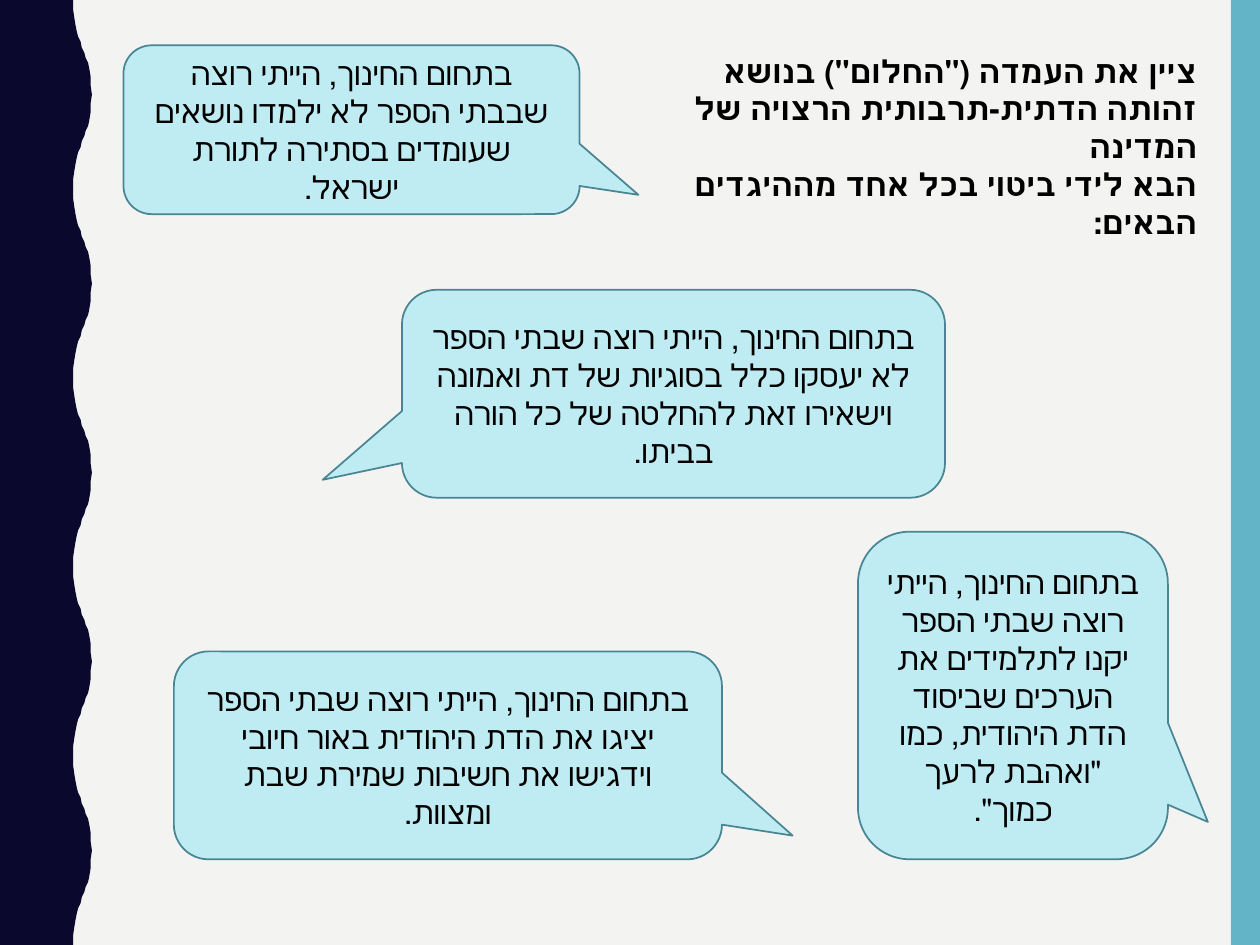
"""Build a slide of four speech bubbles about religion in state education."""
from dataclasses import dataclass

from pptx import Presentation
from pptx.dml.color import RGBColor
from pptx.enum import lang, shapes, text
from pptx.util import Inches, Pt

PAPER, NAVY, TEAL = "F3F3F2", "0B082E", "62B4C6"
BUBBLE, OUTLINE, INK = "BFECF3", "498592", "000000"

WAVE_PERIOD, WAVE_COUNT = 1.5, 5
HALF_WAVE = [
    (0.58, 0), (0.58, 0.07), (0.59, 0.14), (0.6, 0.2), (0.61, 0.25),
    (0.62, 0.29), (0.64, 0.33), (0.65, 0.38), (0.67, 0.42), (0.68, 0.46),
    (0.7, 0.5), (0.71, 0.55), (0.72, 0.61), (0.72, 0.68), (0.73, 0.75),
]


@dataclass(frozen=True)
class Opinion:
    left: float
    top: float
    width: float
    height: float
    words: str
    tail: tuple[float, float] = (0.629, 0.386)


OPINIONS = [
    Opinion(0.98, 0.36, 3.62, 1.34,
            "בתחום החינוך, הייתי רוצה שבבתי הספר לא ילמדו נושאים "
            "שעומדים בסתירה לתורת ישראל."),
    Opinion(6.81, 4.22, 2.46, 2.6,
            "בתחום החינוך, הייתי רוצה שבתי הספר יקנו לתלמידים את הערכים "
            "שביסוד הדת היהודית, כמו \"ואהבת לרעך כמוך\"."),
    Opinion(3.19, 2.3, 4.31, 1.65,
            "בתחום החינוך, הייתי רוצה שבתי הספר לא יעסקו כלל בסוגיות של "
            "דת ואמונה וישאירו זאת להחלטה של כל הורה בביתו.",
            (-0.646, 0.414)),
    Opinion(1.38, 5.17, 4.35, 1.65,
            "בתחום החינוך, הייתי רוצה שבתי הספר יציגו את הדת היהודית באור "
            "חיובי וידגישו את חשיבות שמירת שבת ומצוות."),
]
TASK = [
    "ציין את העמדה (\"החלום\") בנושא זהותה הדתית-תרבותית הרצויה של המדינה",
    "הבא לידי ביטוי בכל אחד מההיגדים הבאים:",
]


def paint(fill, color: str) -> None:
    fill.solid()
    fill.fore_color.rgb = RGBColor.from_string(color)


def style(shape, fill: str, line: str | None = None) -> None:
    shape.shadow.inherit = False
    paint(shape.fill, fill)
    if line:
        paint(shape.line.fill, line)
        shape.line.width = Pt(1)
    else:
        shape.line.fill.background()


def write(frame, lines: list[str], *, font: str, align, anchor,
          size: float = 18, bold: bool = False, color: str = INK) -> None:
    frame.word_wrap = True
    frame.vertical_anchor = anchor
    for index, line in enumerate(lines):
        paragraph = frame.add_paragraph() if index else frame.paragraphs[0]
        paragraph.alignment = align
        paragraph._p.get_or_add_pPr().set("rtl", "1")
        run = paragraph.add_run()
        run.text = line
        run.font.name, run.font.size, run.font.bold = font, Pt(size), bold
        run.font.language_id = lang.MSO_LANGUAGE_ID.HEBREW
        paint(run.font.fill, color)


def draw_wave(slide) -> None:
    full_wave = HALF_WAVE + [(x, WAVE_PERIOD - y) for x, y in HALF_WAVE[-2::-1]]
    edge = [(Inches(x), Inches(y + WAVE_PERIOD * count))
            for count in range(WAVE_COUNT) for x, y in full_wave]
    builder = slide.shapes.build_freeform(0, 0)
    builder.add_line_segments(
        edge + [(0, Inches(WAVE_PERIOD * WAVE_COUNT))], close=True)
    style(builder.convert_to_shape(), NAVY)


def draw_opinion(slide, opinion: Opinion) -> None:
    bubble = slide.shapes.add_shape(
        shapes.MSO_SHAPE.ROUNDED_RECTANGULAR_CALLOUT,
        Inches(opinion.left), Inches(opinion.top),
        Inches(opinion.width), Inches(opinion.height))
    bubble.adjustments[0], bubble.adjustments[1] = opinion.tail
    style(bubble, BUBBLE, OUTLINE)
    write(bubble.text_frame, [opinion.words], font="Roboto",
          align=text.PP_ALIGN.CENTER, anchor=text.MSO_ANCHOR.MIDDLE)


def main() -> None:
    deck = Presentation()
    deck.slide_width, deck.slide_height = Inches(10), Inches(7.5)
    slide = deck.slides.add_slide(deck.slide_layouts[5])
    paint(slide.background.fill, PAPER)

    draw_wave(slide)
    side_band = slide.shapes.add_shape(
        shapes.MSO_SHAPE.RECTANGLE, Inches(9.77), 0, Inches(0.23), Inches(7.5))
    style(side_band, TEAL)
    for opinion in OPINIONS:
        draw_opinion(slide, opinion)

    task = slide.shapes.title
    task.left, task.top = Inches(4.92), Inches(0.36)
    task.width, task.height = Inches(4.68), Inches(1.01)
    task.text_frame.auto_size = text.MSO_AUTO_SIZE.SHAPE_TO_FIT_TEXT
    write(task.text_frame, TASK, font="Calibri", bold=True,
          align=text.PP_ALIGN.RIGHT, anchor=text.MSO_ANCHOR.TOP)

    deck.save("out.pptx")


if __name__ == "__main__":
    main()
